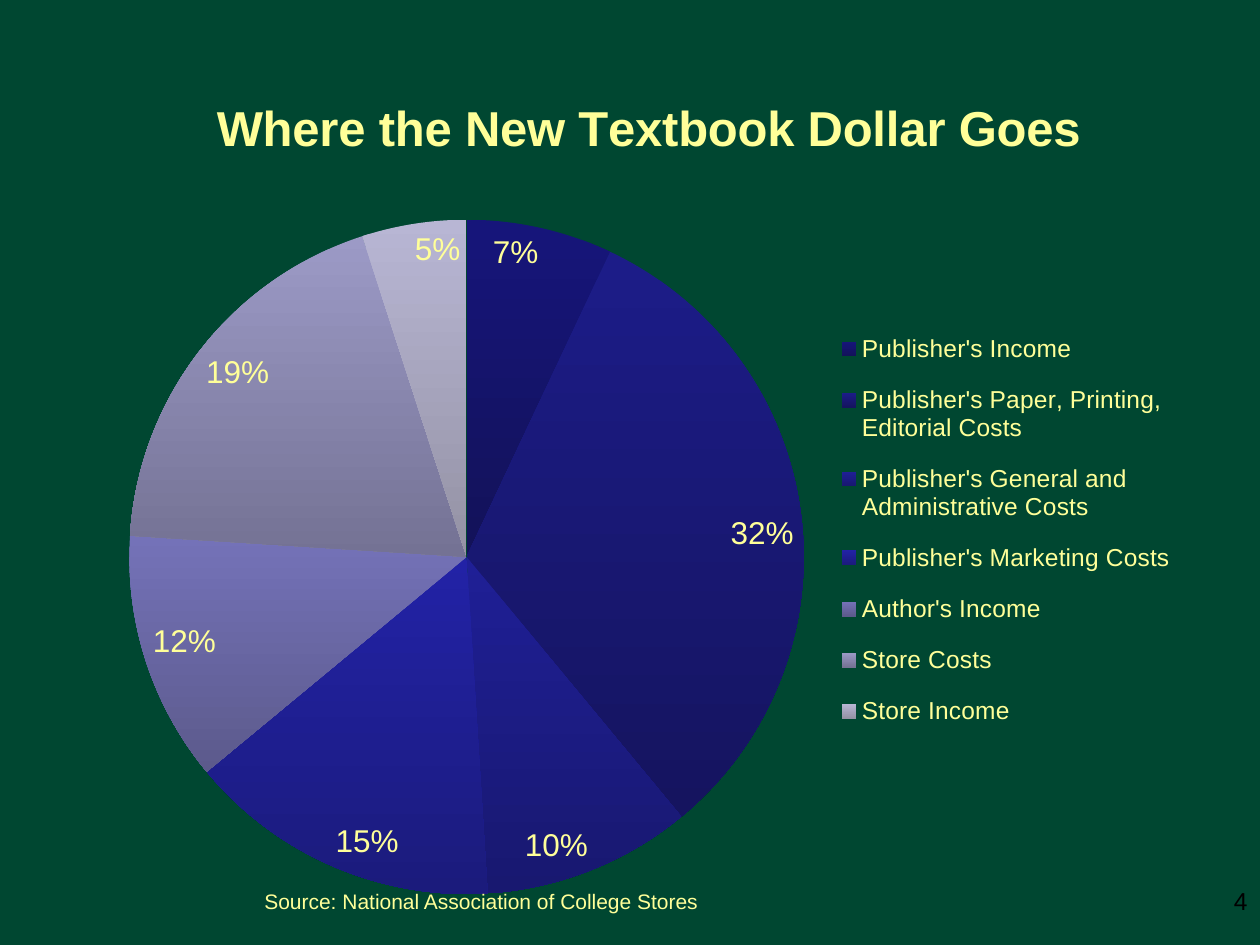
from lxml.etree import SubElement
from pptx import Presentation
from pptx.chart.data import CategoryChartData
from pptx.dml.color import RGBColor
from pptx.enum.chart import XL_CHART_TYPE as ChartType, XL_LABEL_POSITION as LabelPos, XL_LEGEND_POSITION as LegendPos
from pptx.enum.text import MSO_AUTO_SIZE as AutoSize, PP_ALIGN as Align
from pptx.oxml.ns import qn
from pptx.util import Inches, Pt

GREEN, YELLOW, BLACK = "004731", "FFFF99", "000000"
TITLE = "Where the New Textbook Dollar Goes"
SHARES = [
    ("Publisher's Income", 7, "16157A", "131259"),
    ("Publisher's Paper, Printing, Editorial Costs", 32, "1C1C88", "15145F"),
    ("Publisher's General and Administrative Costs", 10, "1F1F96", "181870"),
    ("Publisher's Marketing Costs", 15, "2222A6", "1B1B7C"),
    ("Author's Income", 12, "7472B8", "5C5A8C"),
    ("Store Costs", 19, "9C9AC6", "747294"),
    ("Store Income", 5, "B8B6D4", "9492A4"),
]


def rgb(value):
    return RGBColor.from_string(value)


def place(element, index, **fractions):
    for old in element.findall(qn("c:layout")):
        element.remove(old)
    layout = element.makeelement(qn("c:layout"))
    element.insert(index, layout)
    manual = SubElement(layout, qn("c:manualLayout"))
    if "w" in fractions and index == 0:
        SubElement(manual, qn("c:layoutTarget")).set("val", "inner")
    for axis in ("x", "y"):
        SubElement(manual, qn(f"c:{axis}Mode")).set("val", "edge")
    for name, value in fractions.items():
        SubElement(manual, qn(f"c:{name}")).set("val", str(value))


class SlideBuilder:
    """Holds the type style and the slide being filled."""

    def __init__(self, slide, font_name):
        self.slide = slide
        self.font_name = font_name

    def background(self, color):
        fill = self.slide.background.fill
        fill.solid()
        fill.fore_color.rgb = rgb(color)

    def style(self, font, size, color, bold=False):
        for name, value in {"name": self.font_name, "size": Pt(size), "bold": bold}.items():
            setattr(font, name, value)
        font.color.rgb = rgb(color)

    def text(self, wording, box, size, color, align=Align.LEFT, wrap=True, auto_size=AutoSize.NONE):
        frame = self.slide.shapes.add_textbox(*map(Inches, box)).text_frame
        frame.word_wrap = wrap
        frame.auto_size = auto_size
        paragraph = frame.paragraphs[0]
        paragraph.alignment = align
        run = paragraph.add_run()
        run.text = wording
        self.style(run.font, size, color)

    def pie(self, title, shares, box, color):
        data = CategoryChartData()
        data.categories = [share[0] for share in shares]
        data.add_series(title, [share[1] for share in shares])
        chart = self.slide.shapes.add_chart(ChartType.PIE, *map(Inches, box), data).chart
        self.style(chart.font, 18, BLACK)

        chart.has_title = True
        heading = chart.chart_title.text_frame.paragraphs[0].add_run()
        heading.text = title
        self.style(heading.font, 28, color, bold=True)
        place(chart.chart_title._element, 1, x=0.11, y=0.04)

        chart.has_legend = True
        legend = chart.legend
        legend.position = LegendPos.RIGHT
        legend.include_in_layout = False
        self.style(legend.font, 14, color)
        place(legend._element, 1, x=0.66, y=0.29, w=0.32, h=0.49)

        plot = chart.plots[0]
        plot.vary_by_categories = True
        place(plot._element.getparent(), 0, x=0.04, y=0.185, w=0.6, h=0.76)
        plot.has_data_labels = True
        labels = plot.data_labels
        for name, value in {
            "show_percentage": True,
            "show_value": False,
            "number_format": "0%",
            "number_format_is_linked": False,
            "position": LabelPos.INSIDE_END,
        }.items():
            setattr(labels, name, value)
        self.style(labels.font, 18, color)

        for index, (_, _, *shades) in enumerate(shares):
            slice_format = plot.series[0].points[index].format
            slice_format.line.fill.background()
            fill = slice_format.fill
            fill.gradient()
            fill.gradient_angle = 270
            for stop, shade in zip(fill.gradient_stops, shades):
                stop.color.rgb = rgb(shade)


def main():
    deck = Presentation()
    deck.slide_width, deck.slide_height = Inches(10), Inches(7.5)
    builder = SlideBuilder(deck.slides.add_slide(deck.slide_layouts[6]), "Arial")
    builder.background(GREEN)
    builder.text("4", (7.67, 6.98, 2.33, 0.52), 14, BLACK, align=Align.RIGHT)
    builder.pie(TITLE, SHARES, (0.67, 0.42, 8.92, 7.08), YELLOW)
    builder.text("Source: National Association of College Stores", (2, 7, 3.67, 0.3), 12, YELLOW,
                 wrap=False, auto_size=AutoSize.SHAPE_TO_FIT_TEXT)
    deck.save("out.pptx")


if __name__ == "__main__":
    main()
